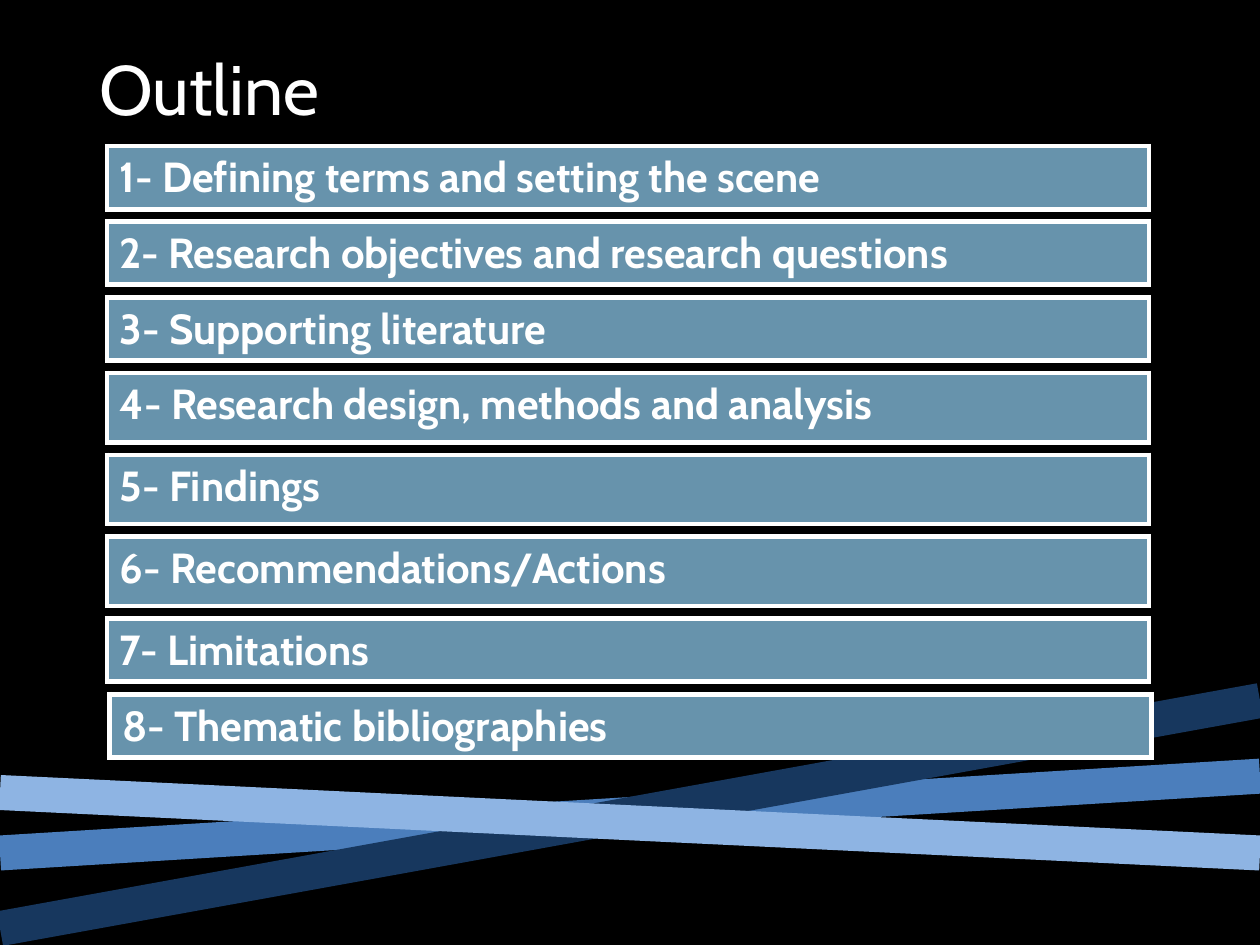
from lxml import etree
from pptx import Presentation
from pptx.dml.color import RGBColor
from pptx.enum import shapes, text
from pptx.oxml.ns import qn
from pptx.util import Inches, Pt

FONT = "Cabin"
BLACK = RGBColor(0x00, 0x00, 0x00)
WHITE = RGBColor(0xFF, 0xFF, 0xFF)
STEEL = RGBColor(0x67, 0x93, 0xAC)
MID_BLUE = RGBColor(0x4B, 0x7E, 0xBC)
NAVY = RGBColor(0x17, 0x37, 0x5E)
LIGHT_BLUE = RGBColor(0x8E, 0xB4, 0xE3)

# Colour, height at the left edge, height at the right edge
RIBBONS = [(MID_BLUE, 6.77, 6.16), (NAVY, 7.37, 5.56), (LIGHT_BLUE, 6.29, 6.77)]

# Topic, left, bar height
TOPICS = [
    ("1- Defining terms and setting the scene", 0.85, 0.5),
    ("2- Research objectives and research questions", 0.85, 0.5),
    ("3- Supporting literature", 0.85, 0.5),
    ("4- Research design, methods and analysis", 0.85, 0.55),
    ("5- Findings", 0.85, 0.55),
    ("6- Recommendations/Actions", 0.85, 0.55),
    ("7- Limitations", 0.85, 0.5),
    ("8- Thematic bibliographies", 0.87, 0.5),
]
TOPICS_TOP, TOPIC_WIDTH, TOPIC_GAP = 1.16, 8.27, 0.1


def style_text(paragraph, size, bold=False):
    paragraph.font.name = FONT
    paragraph.font.size = Pt(size)
    paragraph.font.bold = bold
    paragraph.font.color.rgb = WHITE


def add_ribbons(slide, width):
    for color, left_y, right_y in RIBBONS:
        ribbon = slide.shapes.add_connector(
            shapes.MSO_CONNECTOR.STRAIGHT,
            Inches(0), Inches(left_y), Inches(width), Inches(right_y))
        ribbon.line.color.rgb = color
        ribbon.line.width = Pt(20)
        etree.SubElement(ribbon._element.spPr, qn("a:effectLst"))


def add_title(slide, left, top, width, height):
    title = slide.shapes.add_textbox(
        Inches(left), Inches(top), Inches(width), Inches(height))
    frame = title.text_frame
    frame.word_wrap = True
    frame.vertical_anchor = text.MSO_ANCHOR.BOTTOM
    frame.text = "Outline"
    style_text(frame.paragraphs[0], 40)


def add_borders(cell, color, points):
    properties = cell._tc.get_or_add_tcPr()
    for index, side in enumerate(("a:lnL", "a:lnR", "a:lnT", "a:lnB")):
        border = etree.Element(qn(side), w=str(Pt(points)))
        fill = etree.SubElement(border, qn("a:solidFill"))
        etree.SubElement(fill, qn("a:srgbClr"), val=str(color))
        properties.insert(index, border)


def add_topic(slide, topic, left, top, width, height):
    table = slide.shapes.add_table(
        1, 1, Inches(left), Inches(top), Inches(width), Inches(height)).table
    table.first_row = table.horz_banding = False
    cell = table.cell(0, 0)
    cell.text = topic
    style_text(cell.text_frame.paragraphs[0], 24, bold=True)
    cell.fill.solid()
    cell.fill.fore_color.rgb = STEEL
    add_borders(cell, WHITE, 3)


def add_topics(slide, top, width, gap):
    for topic, left, height in TOPICS:
        add_topic(slide, topic, left, top, width, height)
        top += height + gap


def main():
    deck = Presentation()
    deck.slide_width, deck.slide_height = Inches(10), Inches(7.5)
    slide = deck.slides.add_slide(deck.slide_layouts[6])
    slide.background.fill.solid()
    slide.background.fill.fore_color.rgb = BLACK
    add_ribbons(slide, 10)
    add_title(slide, 0.69, -0.09, 8.4, 1.17)
    add_topics(slide, TOPICS_TOP, TOPIC_WIDTH, TOPIC_GAP)
    deck.save("out.pptx")


if __name__ == "__main__":
    main()
